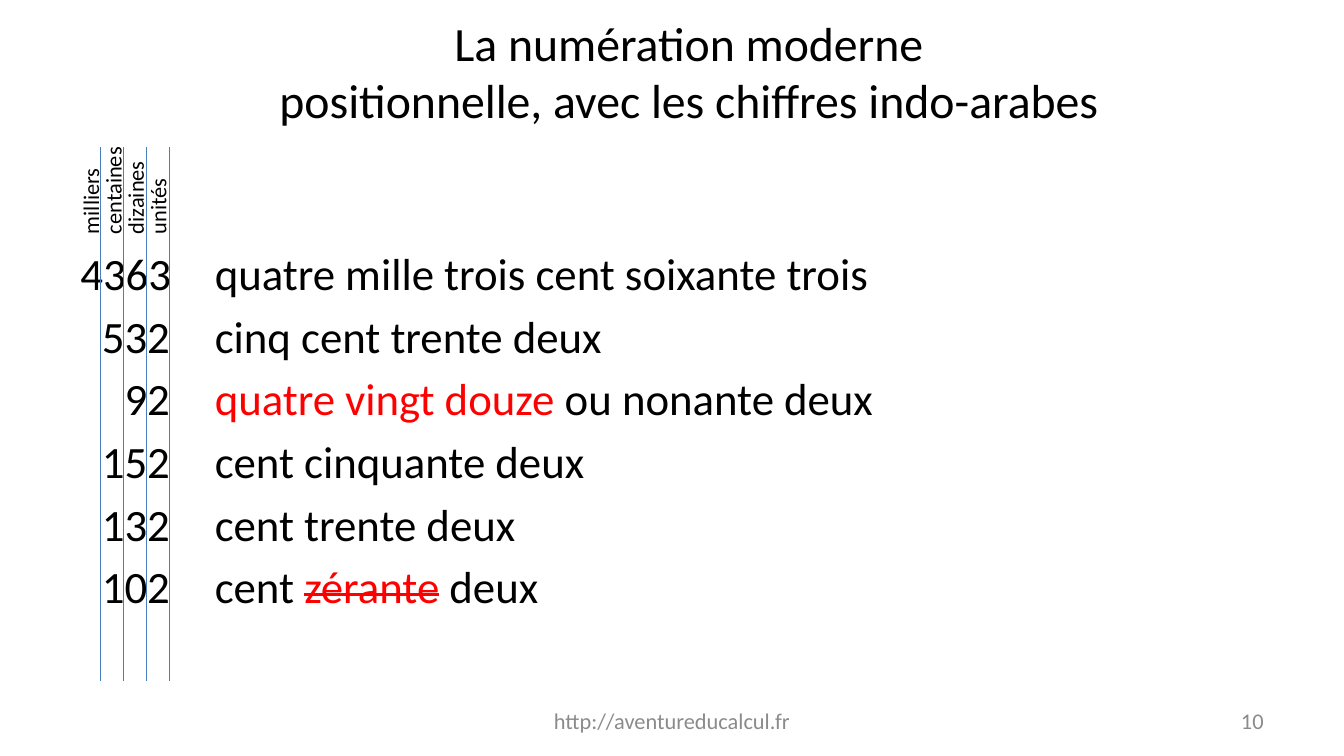
from dataclasses import dataclass

from lxml import etree
from pptx import Presentation
from pptx.dml.color import RGBColor
from pptx.enum import shapes, text
from pptx.oxml import ns
from pptx.util import Pt

COLOURS = {"ink": "000000", "accent": "FF0000", "rule": "4A7EBB", "muted": "8B8B8B"}
NUMBER_STOP, WORDS_STOP = 48, 72
COLUMN_PITCH = 12
RULE_PITCH = 12.3


@dataclass(frozen=True)
class Span:
    words: str
    colour: str = "ink"
    struck: bool = False


@dataclass(frozen=True)
class Reading:
    number: str
    spans: tuple[Span, ...]


@dataclass(frozen=True)
class Rank:
    name: str
    length: float


READINGS = [
    Reading("4363", (Span("quatre mille trois cent soixante trois"),)),
    Reading("532", (Span("cinq cent trente deux"),)),
    Reading("92", (Span("quatre vingt douze ", "accent"), Span("ou nonante deux"))),
    Reading("152", (Span("cent cinquante deux"),)),
    Reading("132", (Span("cent trente deux"),)),
    Reading("102", (Span("cent "), Span("zérante", "accent", True), Span(" deux"))),
]
RANKS = [Rank("milliers", 52), Rank("centaines", 63),
         Rank("dizaines", 55), Rank("unités", 47)]


def add_tabs(paragraph) -> None:
    properties = paragraph._p.get_or_add_pPr()
    stops = etree.SubElement(properties, ns.qn("a:tabLst"))
    for position, side in ((NUMBER_STOP, "r"), (WORDS_STOP, "l")):
        etree.SubElement(stops, ns.qn("a:tab"), pos=str(Pt(position)), algn=side)


def write(slide, paragraphs: list[tuple[Span, ...]], left: float, top: float,
          width: float, height: float, *, size: float,
          align=text.PP_ALIGN.LEFT, anchor=text.MSO_ANCHOR.TOP,
          gap: float = 0, tabbed: bool = False, rotation: float = 0) -> None:
    box = slide.shapes.add_textbox(Pt(left), Pt(top), Pt(width), Pt(height))
    box.rotation = rotation
    frame = box.text_frame
    frame.word_wrap = True
    frame.vertical_anchor = anchor
    for index, spans in enumerate(paragraphs):
        paragraph = frame.paragraphs[0] if index == 0 else frame.add_paragraph()
        if index and gap:
            paragraph.space_before = Pt(gap)
        if tabbed:
            add_tabs(paragraph)
        paragraph.alignment = align
        for span in spans:
            if span.words == "\n":
                paragraph.add_line_break()
                continue
            run = paragraph.add_run()
            run.text = span.words
            run.font.name = "Calibri"
            run.font.size = Pt(size)
            run.font.color.rgb = RGBColor.from_string(COLOURS[span.colour])
            if span.struck:
                run._r.get_or_add_rPr().set("strike", "sngStrike")


def draw_rule(slide, x: float, top: float, bottom: float) -> None:
    rule = slide.shapes.add_connector(
        shapes.MSO_CONNECTOR.STRAIGHT, Pt(x), Pt(top), Pt(x), Pt(bottom))
    rule.line.color.rgb = RGBColor.from_string(COLOURS["rule"])
    rule.line.width = Pt(0.75)
    etree.SubElement(rule._element.spPr, ns.qn("a:effectLst"))


def draw_rank(slide, rank: Rank, centre: float) -> None:
    baseline, height = 132.5, 21.8
    write(slide, [(Span(rank.name),)], centre - rank.length / 2,
          baseline - rank.length / 2 - height / 2, rank.length, height,
          size=12, rotation=270)


def main() -> None:
    deck = Presentation()
    deck.slide_width, deck.slide_height = Pt(720), Pt(405)
    slide = deck.slides.add_slide(deck.slide_layouts[6])

    rows = [(Span(f"\t{reading.number}\t"), *reading.spans) for reading in READINGS]
    write(slide, rows, 36, 128, 648, 267, size=24, gap=4.8, tabbed=True)

    title = (Span("La numération moderne"), Span("\n"),
             Span("positionnelle, avec les chiffres indo-arabes"))
    write(slide, [title], 45, 4.3, 648, 67.7, size=25.6,
          align=text.PP_ALIGN.CENTER, anchor=text.MSO_ANCHOR.MIDDLE)

    for index, rank in enumerate(RANKS):
        draw_rank(slide, rank, 48.5 + index * COLUMN_PITCH)
        draw_rule(slide, 54 + index * RULE_PITCH, 79, 365)

    write(slide, [(Span("http://aventureducalcul.fr", "muted"),)], 246, 375, 228, 21.6,
          size=12, align=text.PP_ALIGN.CENTER, anchor=text.MSO_ANCHOR.MIDDLE)
    write(slide, [(Span("10", "muted"),)], 516, 375, 168, 21.6,
          size=12, align=text.PP_ALIGN.RIGHT, anchor=text.MSO_ANCHOR.MIDDLE)

    deck.save("out.pptx")


if __name__ == "__main__":
    main()
